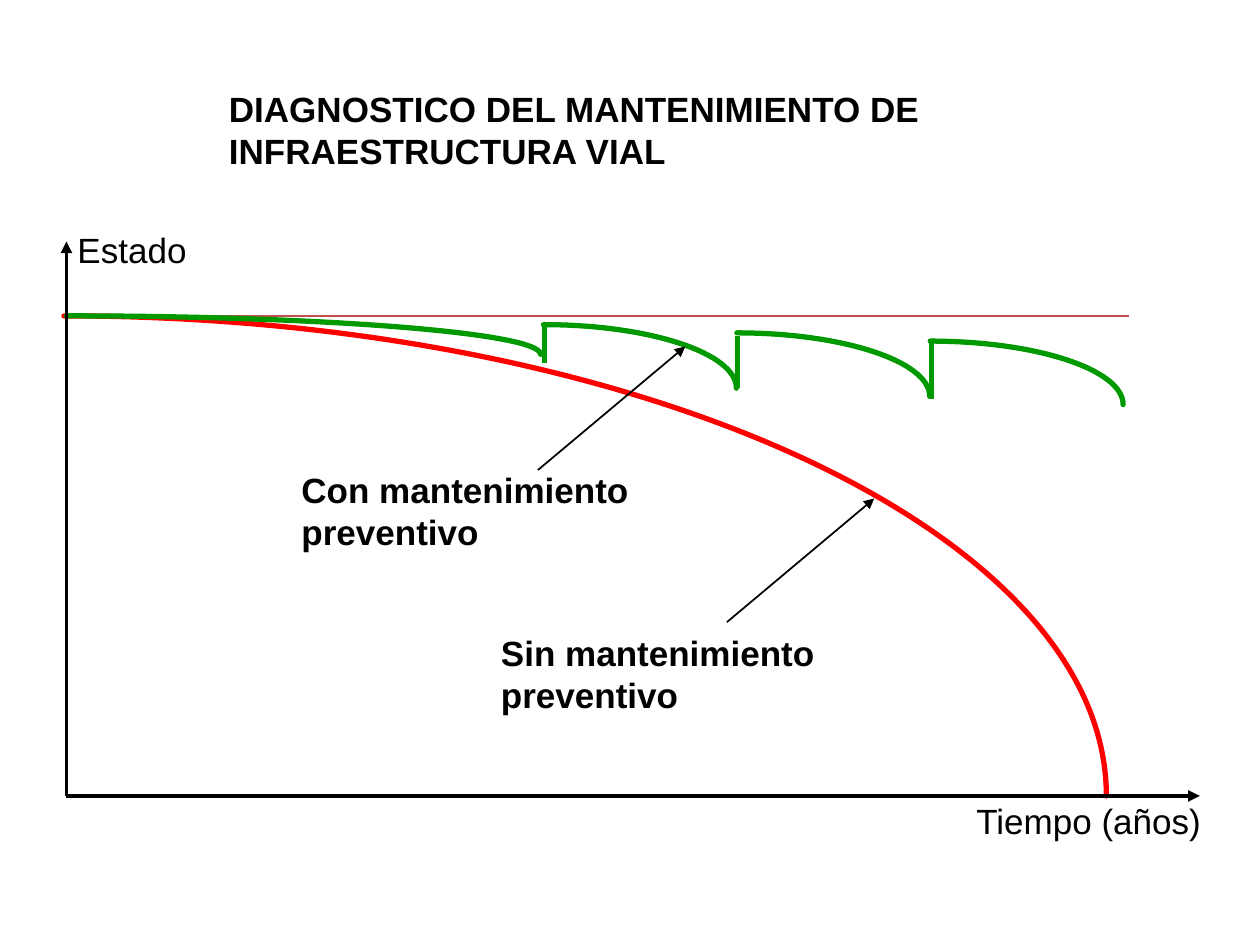
from dataclasses import dataclass

import pptx
import pptx.dml.color
import pptx.enum.shapes
import pptx.enum.text
import pptx.oxml
import pptx.oxml.ns
import pptx.util
from pptx.dml.color import RGBColor
from pptx.util import Pt

BLACK = RGBColor(0x00, 0x00, 0x00)
RED = RGBColor(0xFF, 0x00, 0x00)
BRICK = RGBColor(0xC0, 0x50, 0x4D)
GREEN = RGBColor(0x00, 0x99, 0x00)
CURVE_WIDTH = 3
ELLIPSE_HANDLE = 0.55  # Bezier handle length of a quarter ellipse, per radius


@dataclass
class Decay:
    left: float
    top: float
    width: float
    height: float
    color: RGBColor


@dataclass
class Segment:
    x1: float
    y1: float
    x2: float
    y2: float
    color: RGBColor
    weight: float
    arrow: bool = False


@dataclass
class Label:
    text: str
    left: float
    top: float
    width: float
    height: float
    bold: bool = False


def make_element(tag: str, attributes: str = ""):
    return pptx.oxml.parse_xml(
        f'<a:{tag} {pptx.oxml.ns.nsdecls("a")} {attributes}/>')


def draw_decay(page, decay: Decay) -> None:
    """Draw a quarter ellipse that falls from upper left to lower right."""
    right, bottom = decay.left + decay.width, decay.top + decay.height
    builder = page.shapes.build_freeform(Pt(decay.left), Pt(decay.top))
    builder.add_line_segments([
        (Pt(decay.left + ELLIPSE_HANDLE * decay.width), Pt(decay.top)),
        (Pt(right), Pt(bottom - ELLIPSE_HANDLE * decay.height)),
        (Pt(right), Pt(bottom)),
    ], close=False)
    curve = builder.convert_to_shape()

    # The three straight steps become the handles and end of one Bezier curve.
    steps = curve._element.spPr.xpath(".//a:lnTo")
    bezier = make_element("cubicBezTo")
    steps[0].addprevious(bezier)
    for step in steps:
        bezier.append(step[0])
        step.getparent().remove(step)

    curve.shadow.inherit = False
    curve.fill.background()
    curve.line.color.rgb = decay.color
    curve.line.width = Pt(CURVE_WIDTH)
    curve.line._get_or_add_ln().set("cap", "rnd")


def draw_segment(page, segment: Segment) -> None:
    connector = page.shapes.add_connector(
        pptx.enum.shapes.MSO_CONNECTOR.STRAIGHT,
        Pt(segment.x1), Pt(segment.y1), Pt(segment.x2), Pt(segment.y2))
    connector.line.color.rgb = segment.color
    connector.line.width = Pt(segment.weight)
    if segment.arrow:
        connector.line._get_or_add_ln().append(
            make_element("tailEnd", 'type="triangle"'))
    connector._element.spPr.append(make_element("effectLst"))


def add_span(para, text: str, *, size: float = 20, bold: bool = False,
             color: RGBColor = BLACK, font: str = "Arial") -> None:
    span = para.add_run()
    span.text = text
    span.font.name = font
    span.font.size = Pt(size)
    span.font.bold = bold
    span.font.color.rgb = color


def draw_label(page, label: Label) -> None:
    box = page.shapes.add_textbox(
        Pt(label.left), Pt(label.top), Pt(label.width), Pt(label.height))
    box.text_frame.word_wrap = True
    box.text_frame.auto_size = pptx.enum.text.MSO_AUTO_SIZE.SHAPE_TO_FIT_TEXT
    add_span(box.text_frame.paragraphs[0], label.text, bold=label.bold)


AXIS_X, AXIS_Y = 38, 454.8
START_Y = 180.5

UNMAINTAINED = Decay(36.5, START_Y, 595.7, AXIS_Y - START_Y, RED)
MAINTAINED = [
    Decay(AXIS_X, START_Y, 270.9, 22, GREEN),
    *[Decay(310.6 + 110.5 * cycle, 185.5 + 4.7 * cycle, 110.2, 36.3, GREEN)
      for cycle in range(3)],
]

REFERENCE = Segment(39.6, START_Y, 645.1, START_Y, BRICK, 1)
REPAIRS = [
    Segment(x, bottom, x, top, GREEN, CURVE_WIDTH)
    for x, bottom, top in [
        (311, 207.2, 185.2), (421.4, 221.8, 192.2), (532.5, 228.2, 195.8)]
]
POINTERS = [
    Segment(x, y, x + 84.2, y - 70.6, BLACK, 1, arrow=True)
    for x, y in [(307.4, 268.6), (415.4, 355.5)]
]
AXES = [
    Segment(AXIS_X, AXIS_Y, AXIS_X, 138, BLACK, 2.25, arrow=True),
    Segment(AXIS_X, AXIS_Y, 685.6, AXIS_Y, BLACK, 2.25, arrow=True),
]

LABELS = [
    Label("Estado", 37.2, 127, 90, 31),
    Label("Tiempo (años)", 550.8, 453.6, 152.6, 31),
    Label("Sin mantenimiento preventivo", 279.2, 357.3, 206.6, 55.7, bold=True),
    Label("Con mantenimiento preventivo", 165.2, 264.4, 206.6, 55.7, bold=True),
    Label("DIAGNOSTICO DEL MANTENIMIENTO DE INFRAESTRUCTURA VIAL",
          123.7, 46.4, 475.9, 55.7, bold=True),
]


def main() -> None:
    deck = pptx.Presentation()
    deck.slide_width, deck.slide_height = Pt(720), Pt(540)
    page = deck.slides.add_slide(deck.slide_layouts[6])
    draw_decay(page, UNMAINTAINED)
    draw_segment(page, REFERENCE)
    for decay in MAINTAINED:
        draw_decay(page, decay)
    for segment in POINTERS + REPAIRS + AXES:
        draw_segment(page, segment)
    for label in LABELS:
        draw_label(page, label)
    deck.save("out.pptx")


if __name__ == "__main__":
    main()
